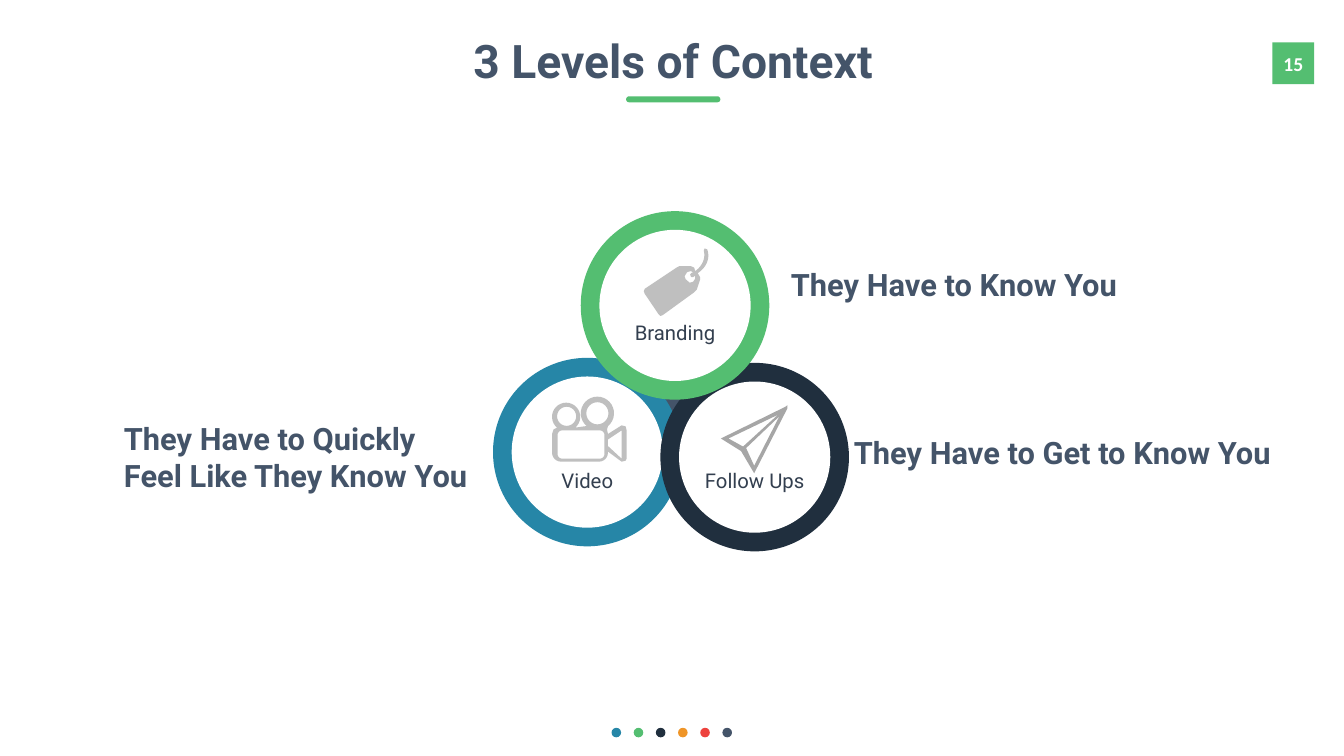
from math import cos, radians, sin

from pptx import Presentation
from pptx.dml.color import RGBColor
from pptx.enum.shapes import MSO_SHAPE
from pptx.enum.text import MSO_ANCHOR, PP_ALIGN
from pptx.util import Inches, Pt

COLORS = {
    "white": "FFFFFF", "green": "54BE71", "blue": "2686A7", "navy": "202F3E",
    "orange": "EF9527", "red": "ED423D", "slate": "445469", "label": "333F4F",
    "plane": "A6A6A6", "icon": "BFBFBF",
}
RING_SIZE = 3.74
HOLE_SIZE = 3


def paint(shape, color):
    """Give a shape a flat fill without line or shadow."""
    shape.shadow.inherit = False
    shape.fill.solid()
    shape.fill.fore_color.rgb = RGBColor.from_string(COLORS[color])
    shape.line.fill.background()


def add_block(slide, kind, left, top, width, height, color):
    """Add a flat preset shape."""
    shape = slide.shapes.add_shape(
        kind, Inches(left), Inches(top), Inches(width), Inches(height))
    paint(shape, color)
    return shape


def write(shape, text, size, color, bold=False, font="Roboto",
          align=PP_ALIGN.CENTER, wrap=False, spacing=None):
    """Put formatted text into a shape."""
    frame = shape.text_frame
    frame.text = text
    frame.word_wrap = wrap
    for paragraph in frame.paragraphs:
        paragraph.alignment = align
        if spacing:
            paragraph.line_spacing = spacing
        for run in paragraph.runs:
            run.font.name = font
            run.font.size = Pt(size)
            run.font.bold = bold
            run.font.color.rgb = RGBColor.from_string(COLORS[color])


def arc(center_x, center_y, radius, start=0, end=360, steps=24):
    """Return points along a circular arc, angles in degrees clockwise."""
    angles = [radians(start + (end - start) * i / steps) for i in range(steps + 1)]
    return [(center_x + radius * cos(a), center_y + radius * sin(a)) for a in angles]


def curve(start, first, second, end, steps=12):
    """Return points along a cubic curve."""
    points = []
    for i in range(steps + 1):
        t = i / steps
        weights = ((1 - t) ** 3, 3 * t * (1 - t) ** 2, 3 * t * t * (1 - t), t ** 3)
        points.append(tuple(
            sum(w * p[axis] for w, p in zip(weights, (start, first, second, end)))
            for axis in (0, 1)))
    return points


def rounded_box(left, top, right, bottom, radius):
    """Return the points of a rounded rectangle."""
    corners = ((right, bottom, -1, -1, 0), (left, bottom, 1, -1, 90),
               (left, top, 1, 1, 180), (right, top, -1, 1, 270))
    return [point for x, y, dx, dy, angle in corners
            for point in arc(x + dx * radius, y + dy * radius, radius,
                             angle, angle + 90, 6)]


def tag_contours():
    """Return the outline and hole of the price tag."""
    outline = (
        curve((1.26, 0.02), (1.33, 0.23), (1.21, 0.4), (1.07, 0.49))
        + [(1.1, 0.54), (1.12, 0.58), (1.12, 0.61), (1.05, 0.82), (1, 0.87),
           (0.38, 1.32), (0.33, 1.34), (0.29, 1.3), (0.02, 0.9), (0, 0.85),
           (0.02, 0.8), (0.65, 0.38), (0.71, 0.35), (0.93, 0.35), (1, 0.38)]
        + curve((1.02, 0.45), (1.12, 0.38), (1.24, 0.23), (1.19, 0.04))
        + [(1.21, 0)])
    hole = [(0.98, 0.66), (0.91, 0.68), (0.83, 0.61), (0.81, 0.55), (0.86, 0.47),
            (0.93, 0.45), (0.98, 0.47), (0.94, 0.49), (0.92, 0.52), (0.93, 0.55),
            (0.95, 0.57), (0.98, 0.57), (1.02, 0.54), (1.02, 0.6)]
    return [outline, hole]


def camera_contours():
    """Return the outline and openings of the film camera."""
    outline = (
        arc(0.28, 0.39, 0.28, 130, 410)
        + arc(0.9, 0.32, 0.33, 130, 410)
        + [(1.09, 0.64), (1.11, 0.73), (1.38, 0.56), (1.46, 0.58), (1.48, 0.66),
           (1.48, 1.22), (1.46, 1.26), (1.38, 1.28), (1.11, 1.08)]
        + arc(0.93, 1.1, 0.18, 0, 90, 6)
        + arc(0.18, 1.1, 0.18, 90, 180, 6)
        + [(0, 0.73), (0.03, 0.64)])
    lens = [(1.38, 1.22), (1.11, 0.97), (1.11, 0.84), (1.38, 0.66)]
    return [outline, arc(0.29, 0.38, 0.19), arc(0.9, 0.32, 0.22),
            rounded_box(0.11, 0.66, 1.04, 1.22, 0.09), lens]


def plane_contours():
    """Return the outline and folds of the paper plane."""
    return [
        [(1.28, 0.03), (0, 0.66), (0.4, 0.91), (0.66, 1.35), (1.32, 0.06), (1.32, 0)],
        [(0.15, 0.66), (1.13, 0.19), (0.44, 0.82)],
        [(0.66, 1.2), (0.5, 0.85), (1.16, 0.22)],
    ]


def add_icon(slide, left, top, contours, color):
    """Draw contours as one freeform placed from its top left corner."""
    builder = None
    for contour in contours:
        points = [(Inches(left + x), Inches(top + y)) for x, y in contour]
        if builder is None:
            builder = slide.shapes.build_freeform(*points[0], scale=1.0)
        else:
            builder.move_to(*points[0])
        builder.add_line_segments(points[1:], close=True)
    paint(builder.convert_to_shape(), color)


def add_ring(slide, left, top, color, label, label_top, label_width, icon):
    """Draw a ring with its icon and label."""
    inset = (RING_SIZE - HOLE_SIZE) / 2
    add_block(slide, MSO_SHAPE.OVAL, left, top, RING_SIZE, RING_SIZE, color)
    add_block(slide, MSO_SHAPE.OVAL, left + inset, top + inset,
              HOLE_SIZE, HOLE_SIZE, "white")
    icon_left, icon_top, contours, icon_color = icon
    add_icon(slide, left + icon_left, top + icon_top, contours, icon_color)
    box = slide.shapes.add_textbox(
        Inches(left + (RING_SIZE - label_width) / 2), Inches(top + label_top),
        Inches(label_width), Inches(0.73))
    frame = box.text_frame
    frame.margin_left = frame.margin_right = Inches(0.24)
    frame.margin_top = frame.margin_bottom = Inches(0.12)
    write(box, label, 29, "label")


def add_header(slide, left, top, width, height):
    """Place the title and the bar beneath it."""
    title = slide.shapes.title
    title.left, title.top = Inches(left), Inches(top)
    title.width, title.height = Inches(width), Inches(height)
    title.text_frame.vertical_anchor = MSO_ANCHOR.MIDDLE
    write(title, "3 Levels of Context", 66, "slate", bold=True, spacing=0.9)
    bar = add_block(slide, MSO_SHAPE.ROUNDED_RECTANGLE,
                    left + (width - 1.87) / 2, top + 1.21, 1.87, 0.12, "green")
    bar.adjustments[0] = 0.5


def add_page_number(slide, left, top, size):
    """Place the page number square."""
    square = add_block(slide, MSO_SHAPE.RECTANGLE, left, top, size, size, "green")
    square.text_frame.vertical_anchor = MSO_ANCHOR.MIDDLE
    write(square, "15", 28, "white", bold=True, font="Calibri")


def add_footer_dots(slide, left, top, size, pitch):
    """Place the row of palette dots."""
    for index, color in enumerate(("blue", "green", "navy", "orange", "red", "slate")):
        add_block(slide, MSO_SHAPE.OVAL, left + index * pitch, top, size, size, color)


def add_caption(slide, left, top, width, height, text):
    """Place a bold caption beside a ring."""
    box = slide.shapes.add_textbox(
        Inches(left), Inches(top), Inches(width), Inches(height))
    write(box, text, 44, "slate", bold=True, align=PP_ALIGN.LEFT, wrap=True)


def main():
    """Build the slide."""
    presentation = Presentation()
    presentation.slide_width, presentation.slide_height = Inches(26.66), Inches(15)
    slide = presentation.slides.add_slide(presentation.slide_layouts[5])
    add_page_number(slide, 25.24, 0.84, 0.83)
    add_footer_dots(slide, 12.13, 14.44, 0.19, 0.44)
    add_header(slide, 9.01, 0.7, 8.69, 1.12)
    add_block(slide, MSO_SHAPE.OVAL, 12.36, 6.99, 1.99, 1.99, "slate")
    add_ring(slide, 9.78, 7.1, "blue", "Video", 2.07, 1.52,
             (1.17, 0.78, camera_contours(), "icon"))
    add_ring(slide, 13.1, 7.2, "navy", "Follow Ups", 1.98, 2.5,
             (1.2, 0.84, plane_contours(), "plane"))
    add_ring(slide, 11.52, 4.19, "green", "Branding", 2.05, 2.11,
             (1.25, 0.74, tag_contours(), "icon"))
    add_caption(slide, 15.59, 5.22, 7.17, 0.84, "They Have to Know You")
    add_caption(slide, 2.36, 8.28, 7.59, 1.58,
                "They Have to Quickly\nFeel Like They Know You")
    add_caption(slide, 16.84, 8.55, 9.13, 0.84, "They Have to Get to Know You")
    presentation.save("out.pptx")


if __name__ == "__main__":
    main()
